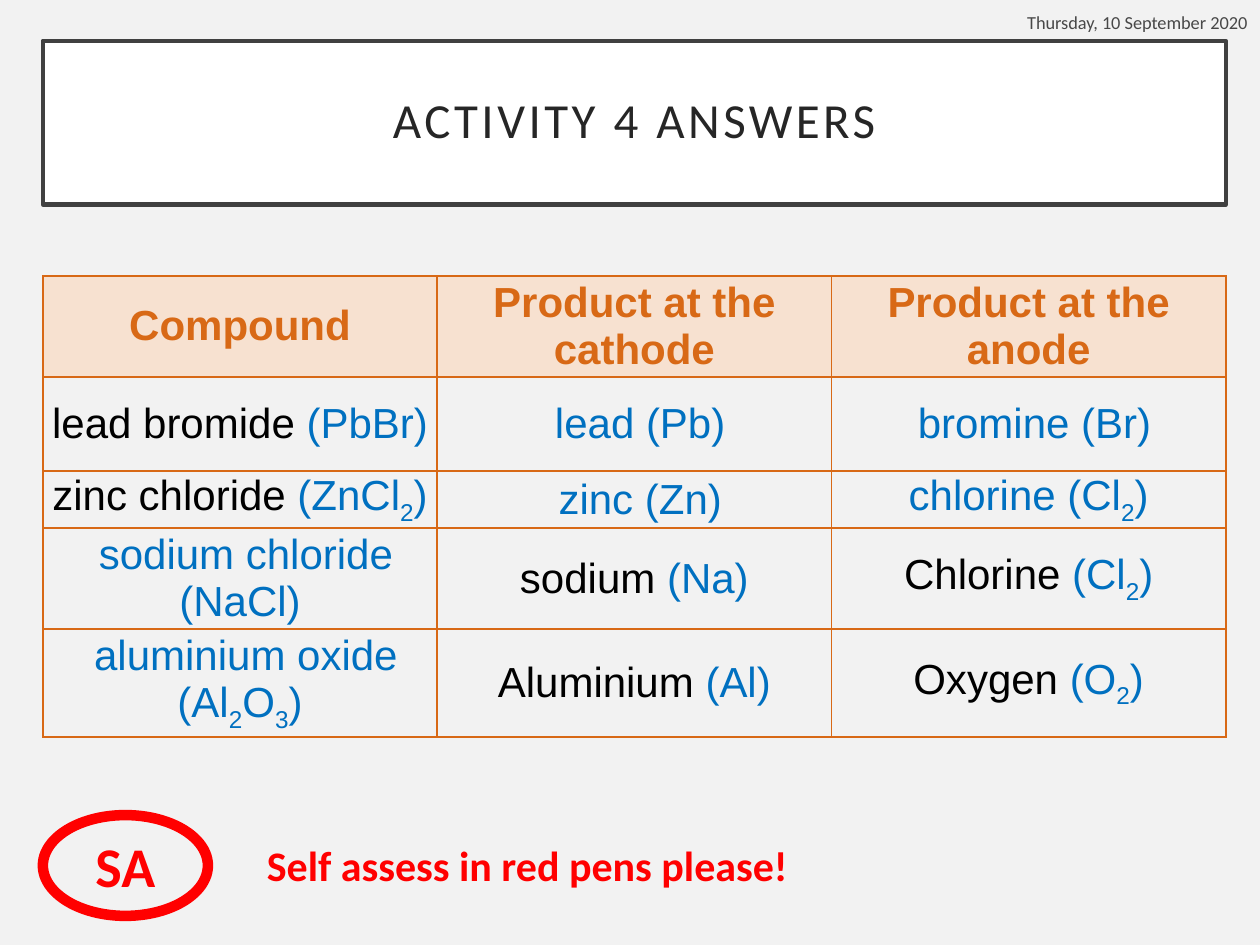
from itertools import groupby

from lxml import etree
from pptx import Presentation
from pptx.dml.color import RGBColor
from pptx.enum import shapes, text
from pptx.oxml import ns
from pptx.util import Pt

# Content: each table cell is (given text, answer text)
TITLE = "ACTIVITY 4 ANSWERS"
DATE = "Thursday, 10 September 2020"
BADGE = "SA"
PROMPT = "Self assess in red pens please!"
HEADINGS = ["Compound", "Product at the cathode", "Product at the anode"]
ANSWERS = [
    [("lead bromide ", "(PbBr)"), (" ", "lead (Pb)"), (" ", "bromine (Br)")],
    [("zinc chloride ", "(ZnCl2)"), (" ", "zinc (Zn)"), ("", "chlorine (Cl2)")],
    [(" ", "sodium chloride (NaCl)"), ("sodium ", "(Na)"), ("Chlorine ", "(Cl2)")],
    [(" ", "aluminium oxide (Al2O3)"), ("Aluminium ", "(Al)"), ("Oxygen ", "(O2)")],
]

BACKGROUND = RGBColor(0xF2, 0xF2, 0xF2)
WHITE = RGBColor(0xFF, 0xFF, 0xFF)
BLACK = RGBColor(0, 0, 0)
TITLE_INK = RGBColor(0x26, 0x26, 0x26)
FRAME = RGBColor(0x40, 0x40, 0x40)
ORANGE = RGBColor(0xD8, 0x69, 0x16)
PEACH = RGBColor(0xF7, 0xE1, 0xD0)
BLUE = RGBColor(0x00, 0x70, 0xC0)
RED = RGBColor(0xFF, 0, 0)

# Layout in points
LEFT, WIDTH = 24.5, 676
TABLE_TOP = 157.7
ROW_HEIGHTS = [55.4, 53.7, 30.3, 53.7, 57.1]
CENTER, RIGHT = text.PP_ALIGN.CENTER, text.PP_ALIGN.RIGHT
MIDDLE = text.MSO_ANCHOR.MIDDLE


def style(p, size, color, align=None, bold=False, name="Calibri"):
    p.alignment = align
    p.font.name, p.font.size, p.font.bold = name, Pt(size), bold
    p.font.color.rgb = color


def add_text(s, box, words):
    tf = s.shapes.add_textbox(*map(Pt, box)).text_frame
    tf.word_wrap = True
    tf.text = words
    return tf


def add_border(cell):
    tcPr = cell._tc.get_or_add_tcPr()
    for side in ("lnL", "lnR", "lnT", "lnB"):
        ln = etree.SubElement(tcPr, ns.qn("a:" + side), w=str(Pt(1)))
        fill = etree.SubElement(ln, ns.qn("a:solidFill"))
        etree.SubElement(fill, ns.qn("a:srgbClr"), val=str(ORANGE))


def add_runs(p, words, color):
    """Write words in one colour, with digits as subscripts."""
    for is_digit, chars in groupby(words, str.isdigit):
        r = p.add_run()
        r.text = "".join(chars)
        r.font.color.rgb = color
        if is_digit:
            r.font._element.set("baseline", "-25000")


def format_cell(cell, parts, bold=False, fill=None):
    add_border(cell)
    if fill is None:
        cell.fill.background()
    else:
        cell.fill.solid()
        cell.fill.fore_color.rgb = fill
    cell.vertical_anchor = MIDDLE
    cell.margin_left = cell.margin_right = Pt(5)
    cell.margin_top = cell.margin_bottom = 0
    p = cell.text_frame.paragraphs[0]
    style(p, 24, BLACK, CENTER, bold, "Arial")
    p.space_before = p.space_after = Pt(3)
    for words, color in parts:
        add_runs(p, words, color)


prs = Presentation()
prs.slide_width, prs.slide_height = Pt(720), Pt(540)
s = prs.slides.add_slide(prs.slide_layouts[5])
s.background.fill.solid()
s.background.fill.fore_color.rgb = BACKGROUND

# Framed title
sp = s.shapes.title
sp.left, sp.top, sp.width, sp.height = map(Pt, (LEFT, 23.3, WIDTH, 93.6))
sp.fill.solid()
sp.fill.fore_color.rgb = WHITE
sp.line.color.rgb, sp.line.width = FRAME, Pt(2.5)
tf = sp.text_frame
tf.text = TITLE
tf.vertical_anchor = MIDDLE
tf.margin_left = tf.margin_right = tf.margin_top = tf.margin_bottom = Pt(14.4)
p = tf.paragraphs[0]
style(p, 28, TITLE_INK, CENTER)
p.line_spacing = 0.9
p.runs[0].font._element.set("spc", "200")

# Date, in partly transparent black
tf = add_text(s, (557.3, 0, 162.7, 25.2), DATE)
tf.vertical_anchor = MIDDLE
p = tf.paragraphs[0]
style(p, 10.5, BLACK, RIGHT)
font = p.runs[0].font
font.color.rgb = BLACK
clr = font._element.find(".//" + ns.qn("a:srgbClr"))
etree.SubElement(clr, ns.qn("a:alpha"), val="70000")

# Answer table
table = s.shapes.add_table(
    len(ROW_HEIGHTS), len(HEADINGS),
    *map(Pt, (LEFT, TABLE_TOP, WIDTH, sum(ROW_HEIGHTS)))).table
table.first_row = table.horz_banding = False
for row, height in zip(table.rows, ROW_HEIGHTS):
    row.height = Pt(height)
for c, heading in enumerate(HEADINGS):
    format_cell(table.cell(0, c), [(heading, ORANGE)], True, PEACH)
for r, answers in enumerate(ANSWERS, 1):
    for c, (given, answer) in enumerate(answers):
        format_cell(table.cell(r, c), [(given, BLACK), (answer, BLUE)])

# Self-assessment badge and prompt
sp = s.shapes.add_shape(shapes.MSO_SHAPE.OVAL, *map(Pt, (LEFT, 465.8, 94.3, 57.6)))
sp.shadow.inherit = False
sp.fill.background()
sp.line.color.rgb, sp.line.width = RED, Pt(6)
sp.text_frame.text = BADGE
sp.text_frame.vertical_anchor = MIDDLE
style(sp.text_frame.paragraphs[0], 32, RED, CENTER, True)

tf = add_text(s, (145.4, 475.9, 419, 36), PROMPT)
style(tf.paragraphs[0], 24, RED, bold=True)

prs.save("out.pptx")
